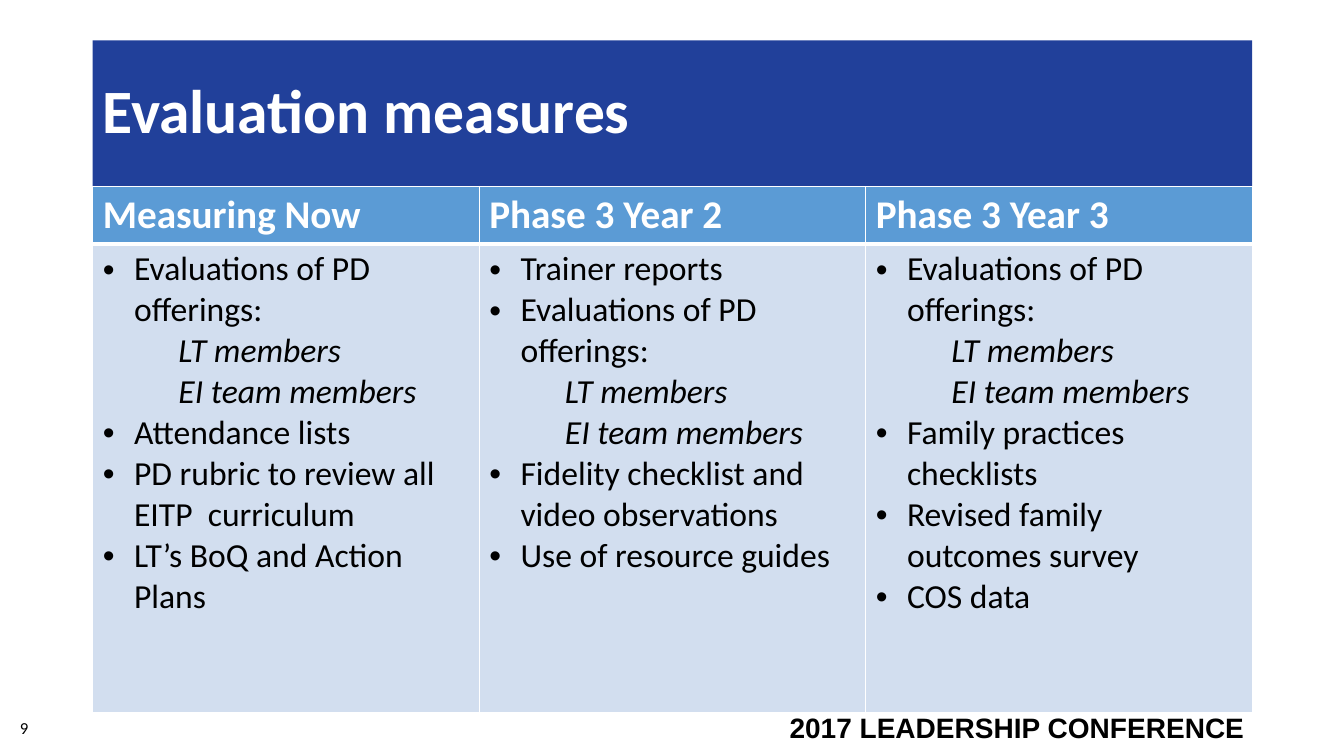
from lxml.etree import SubElement
from pptx import Presentation
from pptx.dml.color import RGBColor
from pptx.enum.shapes import MSO_SHAPE
from pptx.enum.text import MSO_ANCHOR, PP_ALIGN
from pptx.oxml import parse_xml
from pptx.oxml.ns import nsdecls, qn
from pptx.util import Inches, Pt

NAVY = RGBColor(0x21, 0x40, 0x9A)
BLUE = RGBColor(0x5B, 0x9B, 0xD5)
PALE = RGBColor(0xD2, 0xDE, 0xEF)
WHITE = RGBColor(0xFF, 0xFF, 0xFF)
BLACK = RGBColor(0, 0, 0)

OFFERINGS = ["Evaluations of PD offerings:", ("LT members",), ("EI team members",)]
MEASURES = {
    "Measuring Now": OFFERINGS + [
        "Attendance lists",
        "PD rubric to review all EITP  curriculum",
        "LT’s BoQ and Action Plans",
    ],
    "Phase 3 Year 2": ["Trainer reports"] + OFFERINGS + [
        "Fidelity checklist and video observations",
        "Use of resource guides",
    ],
    "Phase 3 Year 3": OFFERINGS + [
        "Family practices checklists",
        "Revised family outcomes survey",
        "COS data",
    ],
}


class SlideBuilder:
    body_font = "Calibri"

    def __init__(self, prs):
        self.s = prs.slides.add_slide(prs.slide_layouts[6])

    def set_text(self, p, text, size, color, bold=False, italic=False, font=None):
        p.text = text
        f = p.runs[0].font
        f.name, f.size, f.bold, f.italic = font or self.body_font, Pt(size), bold, italic
        f.color.rgb = color

    def text(self, box, text, size, anchor, align=PP_ALIGN.LEFT, font=None, bold=False):
        sp = self.s.shapes.add_textbox(*map(Inches, box))
        tf = sp.text_frame
        tf.word_wrap, tf.vertical_anchor = True, anchor
        p = tf.paragraphs[0]
        p.alignment = align
        self.set_text(p, text, size, BLACK, bold, font=font)

    def title(self, box, text):
        sp = self.s.shapes.add_shape(MSO_SHAPE.RECTANGLE, *map(Inches, box))
        sp.shadow.inherit = False
        sp.fill.solid()
        sp.fill.fore_color.rgb = NAVY
        sp.line.fill.background()
        tf = sp.text_frame
        tf.word_wrap, tf.vertical_anchor = True, MSO_ANCHOR.MIDDLE
        p = tf.paragraphs[0]
        p.alignment, p.line_spacing = PP_ALIGN.LEFT, 0.9
        self.set_text(p, text, 44, WHITE, True)

    def style_cell(self, cell, fill, top, bottom):
        cell.fill.solid()
        cell.fill.fore_color.rgb = fill
        tcPr = cell._tc.get_or_add_tcPr()
        widths = {"lnL": 1, "lnR": 1, "lnT": top, "lnB": bottom}
        for i, (side, width) in enumerate(widths.items()):
            tcPr.insert(i, parse_xml(
                f'<a:{side} {nsdecls("a")} w="{Pt(width)}"><a:solidFill>'
                f'<a:srgbClr val="{WHITE}"/></a:solidFill></a:{side}>'))

    def item(self, p, entry):
        nested = isinstance(entry, tuple)
        pPr = p._p.get_or_add_pPr()
        pPr.set("marL", str(Inches(0.75 if nested else 0.31)))
        pPr.set("indent", str(Inches(0 if nested else -0.31)))
        if nested:
            SubElement(pPr, qn("a:buNone"))
        else:
            SubElement(pPr, qn("a:buFont"), typeface="Arial")
            SubElement(pPr, qn("a:buChar"), char="•")
        self.set_text(p, entry[0] if nested else entry, 24, BLACK, italic=nested)

    def table(self, box, row_heights, columns):
        frame = self.s.shapes.add_table(2, len(columns), *map(Inches, box))
        tbl = frame.table
        for row, height in zip(tbl.rows, row_heights):
            row.height = Inches(height)
        for i, (heading, entries) in enumerate(columns.items()):
            tbl.columns[i].width = Inches(box[2] / len(columns))
            head, body = tbl.cell(0, i), tbl.cell(1, i)
            self.style_cell(head, BLUE, 1, 3)
            self.style_cell(body, PALE, 3, 1)
            self.set_text(head.text_frame.paragraphs[0], heading, 28, WHITE, True)
            tf = body.text_frame
            for n, entry in enumerate(entries):
                self.item(tf.add_paragraph() if n else tf.paragraphs[0], entry)


def main():
    prs = Presentation()
    prs.slide_width, prs.slide_height = Inches(13.33), Inches(7.5)
    slide = SlideBuilder(prs)
    slide.text((7.52, 7, 4.92, 0.42), "2017 LEADERSHIP CONFERENCE", 20,
               MSO_ANCHOR.TOP, PP_ALIGN.RIGHT, "Arial", True)
    slide.text((0.1, 7.02, 3, 0.4), "9", 12, MSO_ANCHOR.MIDDLE)
    slide.title((0.92, 0.4, 11.5, 1.45), "Evaluation measures")
    slide.table((0.92, 1.85, 11.5, 5.22), (0.57, 4.65), MEASURES)
    prs.save("out.pptx")


if __name__ == "__main__":
    main()
